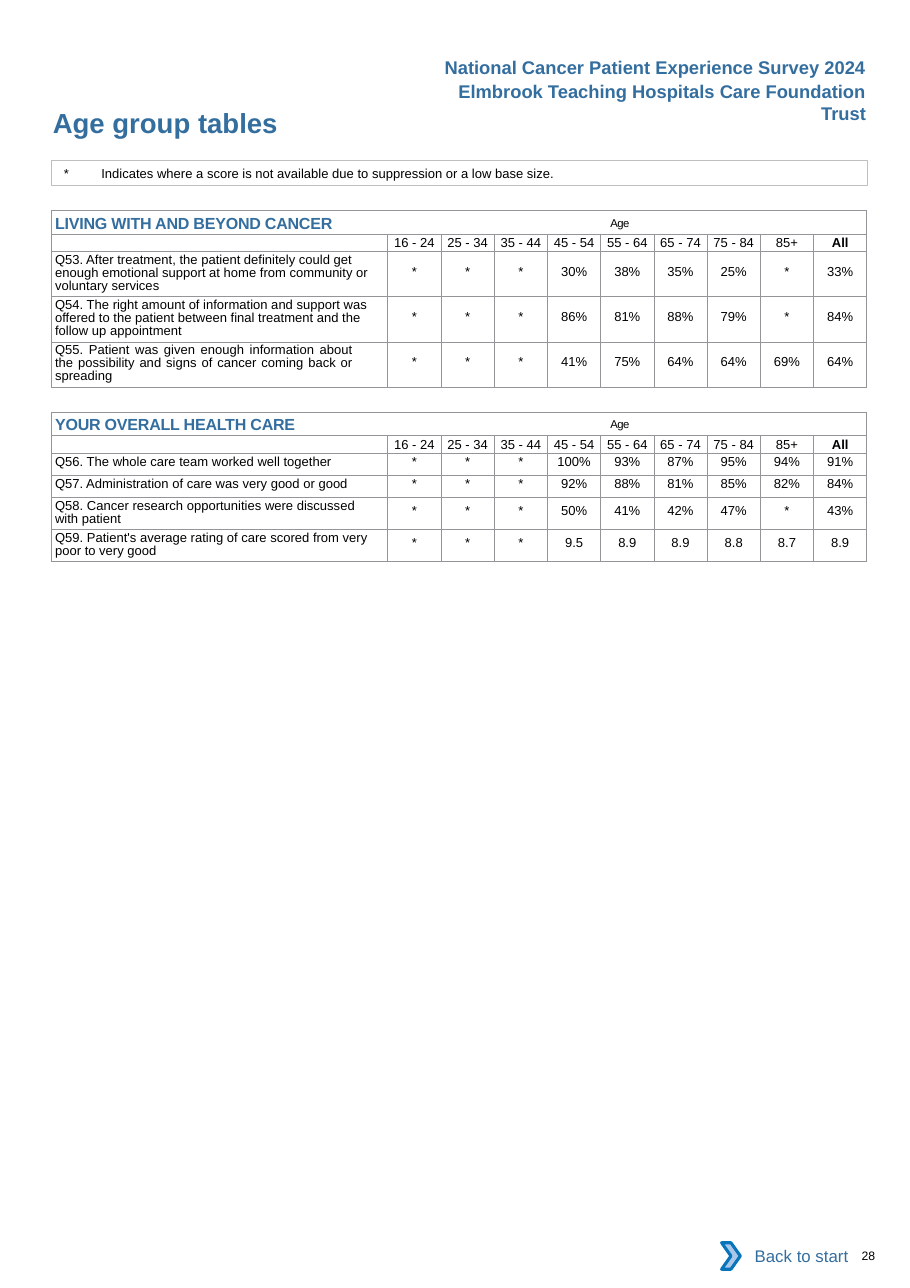
import pptx
import pptx.dml.color
import pptx.enum.shapes
import pptx.enum.text
import pptx.oxml
import pptx.oxml.ns
import pptx.util
from lxml import etree

RGBColor = pptx.dml.color.RGBColor
BLUE = RGBColor(0x33, 0x6E, 0x9F)
BLACK = RGBColor(0, 0, 0)
WHITE = RGBColor(0xFF, 0xFF, 0xFF)
TABLE_LINE = RGBColor(0x93, 0x95, 0x98)
NOTE_LINE = RGBColor(0xBF, 0xBF, 0xBF)
CHEVRON_FILL = RGBColor(0xA8, 0xC7, 0xE9)
CHEVRON_LINE = RGBColor(0x0A, 0x74, 0xBB)

Pt = pptx.util.Pt
ALIGN = pptx.enum.text.PP_ALIGN
ANCHOR = pptx.enum.text.MSO_ANCHOR
SHAPE = pptx.enum.shapes.MSO_SHAPE
qn = pptx.oxml.ns.qn

# The page grid: 826 columns by 1169 rows of equal square units
GRID_COLUMNS, GRID_ROWS = 826, 1169
UNIT = pptx.util.Inches(0.01)

LEFT, WIDTH = 47, 740
QUESTION_WIDTH = 305
AGES = ["16 - 24", "25 - 34", "35 - 44", "45 - 54", "55 - 64", "65 - 74", "75 - 84", "85+", "All"]

# Row: question, scores, row height in grid rows, score padding in points
LIVING_ROWS = [
    ("Q53. After treatment, the patient definitely could get enough emotional support "
     "at home from community or voluntary services",
     "* * * 30% 38% 35% 25% * 33%", 41, 8.6),
    ("Q54. The right amount of information and support was offered to the patient "
     "between final treatment and the follow up appointment",
     "* * * 86% 81% 88% 79% * 84%", 41, 8.6),
    ("Q55. Patient was given enough information about the possibility and signs of "
     "cancer coming back or spreading",
     "* * * 41% 75% 64% 64% 69% 64%", 41, 8.6),
]
OVERALL_ROWS = [
    ("Q56. The whole care team worked well together",
     "* * * 100% 93% 87% 95% 94% 91%", 20, 1.1),
    ("Q57. Administration of care was very good or good",
     "* * * 92% 88% 81% 85% 82% 84%", 20, 1.1),
    ("Q58. Cancer research opportunities were discussed with patient",
     "* * * 50% 41% 42% 47% * 43%", 29, 4.2),
    ("Q59. Patient's average rating of care scored from very poor to very good",
     "* * * 9.5 8.9 8.9 8.8 8.7 8.9", 29, 4.2),
]
JUSTIFIED_QUESTION = "Q55"


def add_run(paragraph, text, size=8.5, color=BLACK, bold=False, spacing=0, baseline=0):
    run = paragraph.add_run()
    run.text = text
    run.font.name = "Arial"
    run.font.size = Pt(size)
    run.font.bold = bold
    run.font.color.rgb = color
    properties = run.font._element
    if spacing:
        properties.set("spc", str(round(spacing * 100)))
    if baseline:
        properties.set("baseline", str(baseline * 1000))


def write_text(frame, text, align=ALIGN.LEFT, indent=0, before=0, line=None, tab=None, **font):
    """Write one paragraph and return it; indent and tab are in grid columns."""
    paragraph = frame.paragraphs[0]
    paragraph.alignment = align
    paragraph.space_before = Pt(before)
    if line:
        paragraph.line_spacing = Pt(line)
    properties = paragraph._p.get_or_add_pPr()
    properties.set("marL", str(indent * UNIT))
    if tab:
        tabs = etree.SubElement(properties, qn("a:tabLst"))
        etree.SubElement(tabs, qn("a:tab"), pos=str(tab * UNIT), algn="l")
    if text:
        add_run(paragraph, text, **font)
    else:
        etree.SubElement(paragraph._p, qn("a:endParaRPr"), sz="850")
    return paragraph


def set_insets(target, left=0, top=0, right=0, bottom=0):
    target.margin_left, target.margin_top = left, top
    target.margin_right, target.margin_bottom = right, bottom


def set_borders(cell, color, width):
    properties = cell._tc.get_or_add_tcPr()
    for position, side in enumerate(("a:lnL", "a:lnR", "a:lnT", "a:lnB")):
        border = etree.Element(qn(side), w=str(Pt(width)))
        fill = etree.SubElement(border, qn("a:solidFill"))
        etree.SubElement(fill, qn("a:srgbClr"), val=str(color))
        properties.insert(position, border)


class Page:
    def __init__(self, presentation):
        presentation.slide_width = GRID_COLUMNS * UNIT
        presentation.slide_height = GRID_ROWS * UNIT
        self.slide = presentation.slides.add_slide(presentation.slide_layouts[6])

    def box(self, *grid_place):
        return [round(length * UNIT) for length in grid_place]

    def label(self, place, text, **style):
        """Text box without insets."""
        frame = self.slide.shapes.add_textbox(*self.box(*place)).text_frame
        frame.word_wrap = True
        set_insets(frame)
        write_text(frame, text, **style)

    def running_head(self, place, text):
        frame = self.slide.shapes.add_textbox(*self.box(*place)).text_frame
        frame.word_wrap = False
        frame.auto_size = pptx.enum.text.MSO_AUTO_SIZE.SHAPE_TO_FIT_TEXT
        write_text(frame, text, align=ALIGN.RIGHT, size=12, color=BLUE, bold=True)

    def shape(self, kind, place, fill=None, line=None, line_width=0.5, parent=None):
        shape = (parent or self.slide).shapes.add_shape(kind, *self.box(*place))
        shape.shadow.inherit = False
        if fill is None:
            shape.fill.background()
        else:
            shape.fill.solid()
            shape.fill.fore_color.rgb = fill
        if line is None:
            shape.line.fill.background()
        else:
            shape.line.color.rgb = line
            shape.line.width = Pt(line_width)
        return shape

    def note(self, place, text):
        frame = self.shape(SHAPE.RECTANGLE, place, line=NOTE_LINE).text_frame
        frame.word_wrap = True
        frame.vertical_anchor = ANCHOR.TOP
        set_insets(frame, top=4 * UNIT, bottom=4 * UNIT)
        write_text(frame, text, indent=11, before=9.1, tab=34)

    def back_button(self, text):
        group = self.slide.shapes.add_group_shape()
        button = self.shape(SHAPE.RECTANGLE, (662, 1119, 118, 42), fill=WHITE, parent=group)
        button.text_frame.vertical_anchor = ANCHOR.MIDDLE
        write_text(button.text_frame, text, align=ALIGN.RIGHT, size=11, color=BLUE)
        self.shape(SHAPE.CHEVRON, (655, 1128, 17, 24), fill=CHEVRON_FILL,
                   line=CHEVRON_LINE, line_width=2, parent=group)

    def age_table(self, top, heading, rows):
        heights = [21, 16] + [row[2] for row in rows]
        place = self.box(LEFT, top, WIDTH, sum(heights))
        table = self.slide.shapes.add_table(len(heights), len(AGES) + 1, *place).table
        table.first_row = table.horz_banding = False
        age_width = (WIDTH - QUESTION_WIDTH) / len(AGES)
        for column, width in zip(table.columns, [QUESTION_WIDTH] + [age_width] * len(AGES)):
            column.width = round(width * UNIT)
        for row, height in zip(table.rows, heights):
            row.height = height * UNIT
        for cell in table.iter_cells():
            set_insets(cell)
            set_borders(cell, TABLE_LINE, 0.5)
            cell.fill.background()

        title = table.cell(0, 0)
        title.merge(table.cell(0, len(AGES)))
        title.vertical_anchor = ANCHOR.MIDDLE
        paragraph = write_text(title.text_frame, heading + "\t", indent=3, before=0.5, tab=504,
                               size=10.5, color=BLUE, bold=True, spacing=-0.1)
        add_run(paragraph, "Age", size=12.8, spacing=-0.4, baseline=10)

        for index, age in enumerate([""] + AGES):
            cell = table.cell(1, index)
            cell.vertical_anchor = ANCHOR.MIDDLE
            write_text(cell.text_frame, age, align=ALIGN.CENTER, line=9.9, bold=age == "All")
        for index, (question, scores, height, padding) in enumerate(rows, start=2):
            self.question(table.cell(index, 0), question, one_line=height == 20)
            for column, score in enumerate(scores.split(), start=1):
                cell = table.cell(index, column)
                cell.margin_top = Pt(padding)
                write_text(cell.text_frame, score, align=ALIGN.CENTER, before=padding)

    def question(self, cell, text, one_line):
        justified = text.startswith(JUSTIFIED_QUESTION)
        padding = 1.1 if one_line else 1.6
        set_insets(cell, top=Pt(padding), right=(32 if justified else 14) * UNIT)
        write_text(cell.text_frame, text, align=ALIGN.JUSTIFY if justified else ALIGN.LEFT,
                   indent=3, before=padding, line=None if one_line else 8.6)


def main():
    presentation = pptx.Presentation()
    page = Page(presentation)
    page.label((772, 1133, 51, 13), "28", indent=10, before=0.2, size=8)
    page.label((LEFT, 96, 413, 30), "Age group tables", indent=1, before=1,
               size=18, color=BLUE, bold=True)
    page.age_table(191, "LIVING WITH AND BEYOND CANCER", LIVING_ROWS)
    page.age_table(374, "YOUR OVERALL HEALTH CARE", OVERALL_ROWS)
    page.note((LEFT, 146, WIDTH, 22),
              "*\tIndicates where a score is not available due to suppression or a low base size.")
    page.running_head((362, 68, 434, 30), "Elmbrook Teaching Hospitals Care Foundation Trust")
    page.running_head((392, 46, 404, 30), "National Cancer Patient Experience Survey 2024")
    page.back_button("Back to start")
    presentation.save("out.pptx")


if __name__ == "__main__":
    main()
